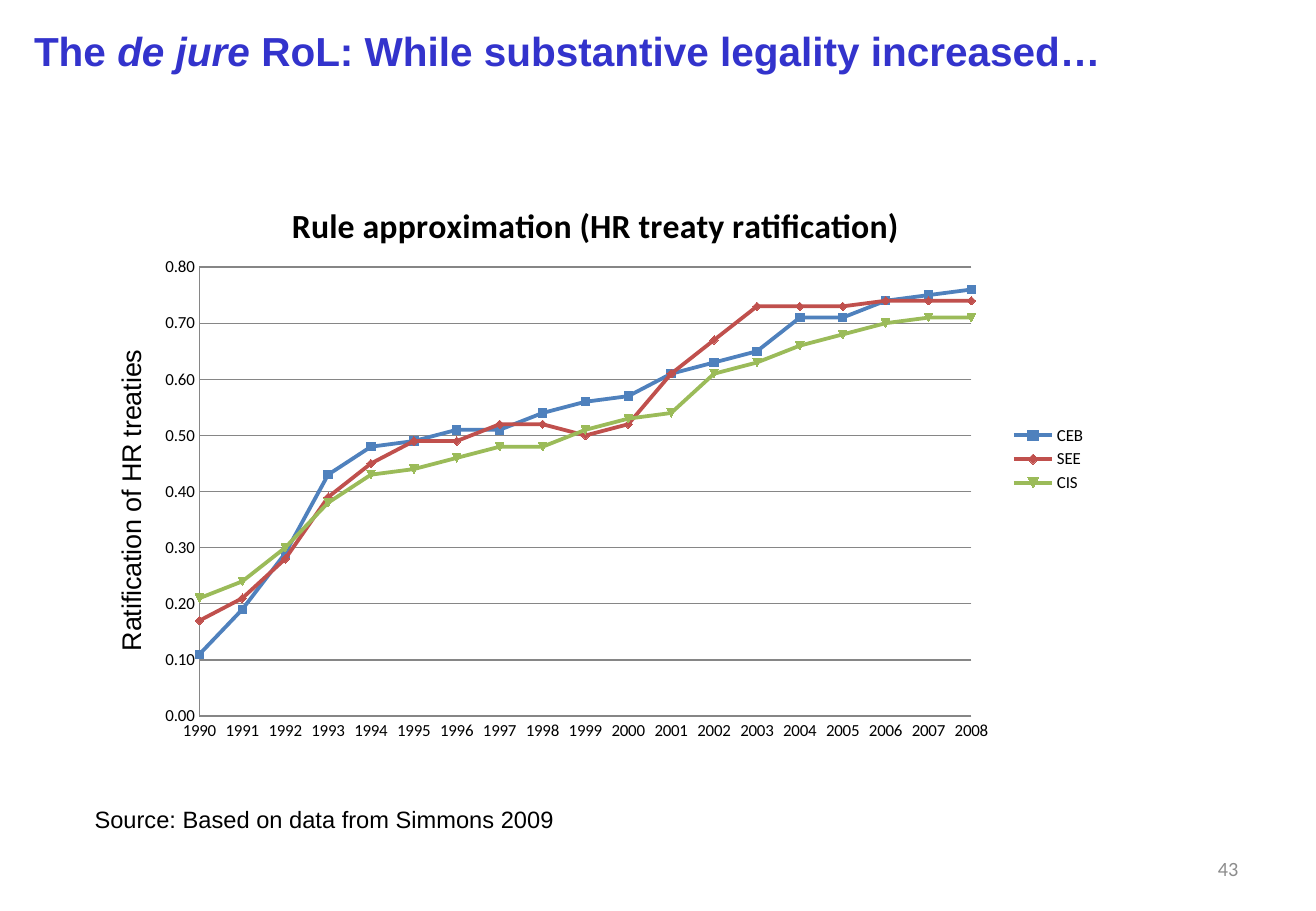
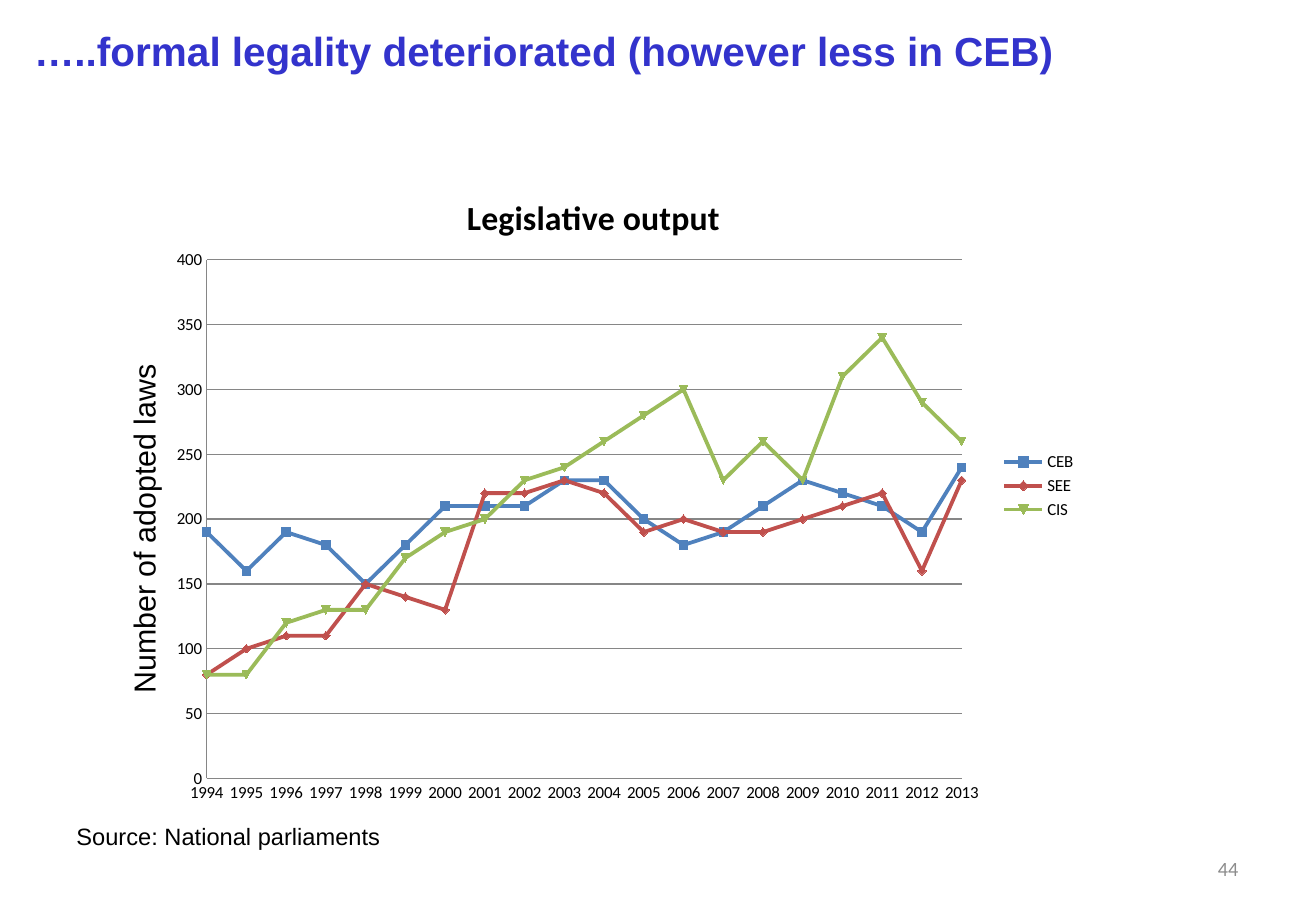
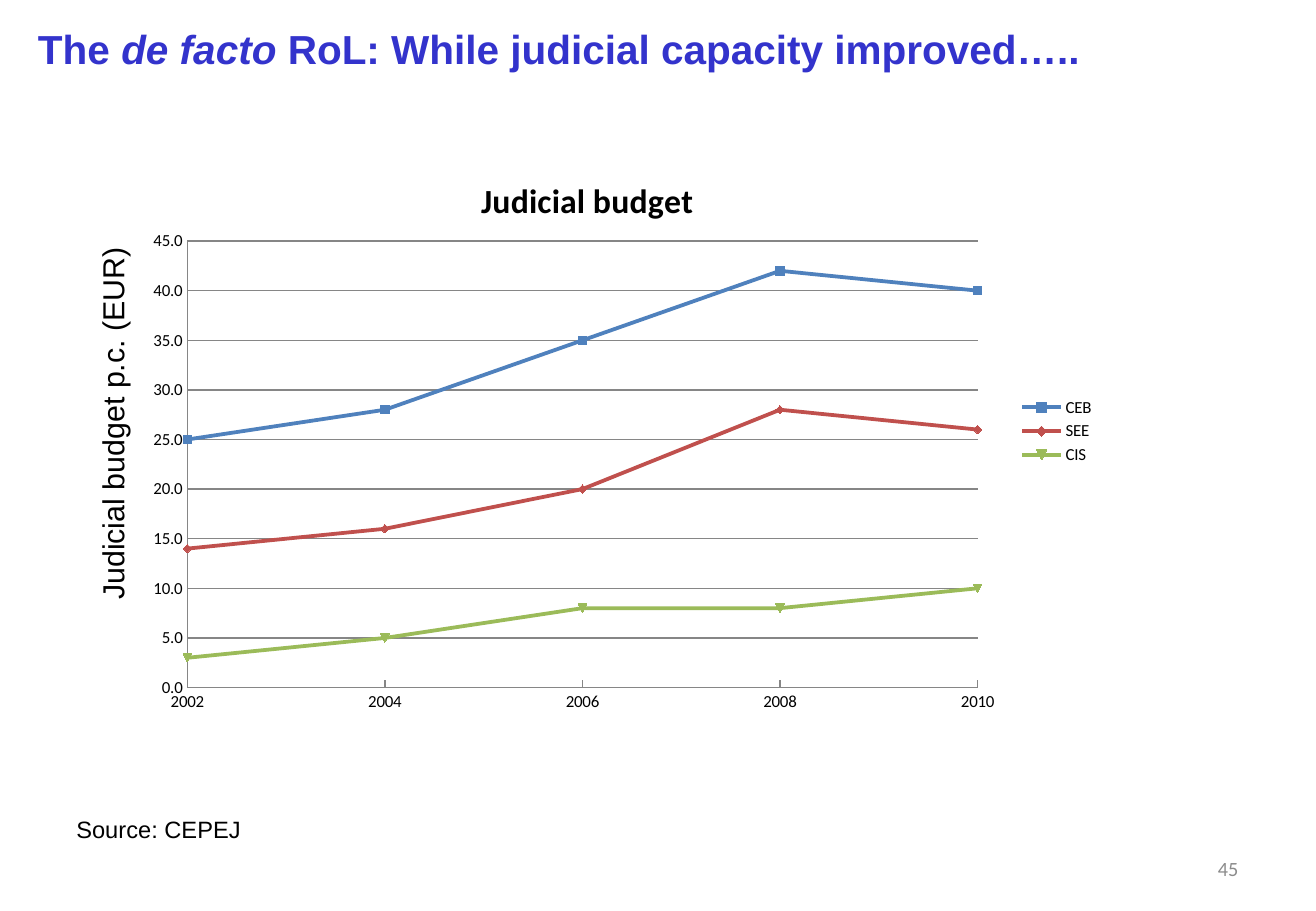
"""Build three slides of line charts on the rule of law."""
from dataclasses import dataclass

from pptx import Presentation
from pptx.chart.data import CategoryChartData
from pptx.dml.color import RGBColor
from pptx.enum.chart import XL_CHART_TYPE, XL_LEGEND_POSITION, XL_TICK_MARK
from pptx.enum.text import MSO_ANCHOR, MSO_AUTO_SIZE, PP_ALIGN
from pptx.oxml import parse_xml
from pptx.oxml.ns import nsdecls
from pptx.util import Inches, Pt

LINE_MARKERS = XL_CHART_TYPE.LINE_MARKERS
LEGEND_RIGHT = XL_LEGEND_POSITION.RIGHT
TICK_NONE, TICK_INSIDE = XL_TICK_MARK.NONE, XL_TICK_MARK.INSIDE
TOP, MIDDLE = MSO_ANCHOR.TOP, MSO_ANCHOR.MIDDLE
LEFT, RIGHT = PP_ALIGN.LEFT, PP_ALIGN.RIGHT
NO_AUTOFIT = MSO_AUTO_SIZE.NONE
TITLE_ONLY = 5


@dataclass(frozen=True)
class Theme:
    """Colours, fonts and sizes shared by all slides."""
    heading: str = "3333CC"
    ink: str = "000000"
    number: str = "8C8C8C"
    grid: str = "868686"
    series: tuple = ("4F81BD", "C0504D", "9BBB59")
    text_font: str = "Arial"
    chart_font: str = "Calibri"
    heading_size: int = 24
    chart_title_size: int = 20
    source_size: int = 14
    number_size: int = 12
    chart_size: int = 10
    series_width: float = 2.25
    grid_width: float = 0.75


THEME = Theme()
REGIONS = ("CEB", "SEE", "CIS")
NUMBER_BOX = (7.76, 6.95, 2.53, 0.4)
HEADING_BOX = (0.18, 0.21, 10.83, 1.1)
HEADING_STYLE = {"box": HEADING_BOX, "inset": 0.1, "top_inset": 0.05, "line_spacing": 0.9}

SLIDES = (
    {
        "number": 43,
        "heading": (("The ", False), ("de jure ", True),
                    ("RoL: While substantive legality increased…", False)),
        "heading_style": HEADING_STYLE,
        "source": ("Source: Based on data from Simmons 2009", (0.68, 6.58, 5.17, 0.34)),
        "chart": {
            "box": (0.68, 1.37, 8.36, 4.82),
            "title": "Rule approximation (HR treaty ratification)",
            "title_at": (0.2, 0.05),
            "plot_at": (0.115, 0.172, 0.76, 0.767),
            "axis_title": "Ratification of HR treaties",
            "axis_title_size": 16,
            "axis_title_at": (0.026, 0.305),
            "number_format": "0.00",
            "top_value": 0.8,
            "step": 0.1,
            "years": range(1990, 2009),
            "values": (
                (0.11, 0.19, 0.29, 0.43, 0.48, 0.49, 0.51, 0.51, 0.54, 0.56,
                 0.57, 0.61, 0.63, 0.65, 0.71, 0.71, 0.74, 0.75, 0.76),
                (0.17, 0.21, 0.28, 0.39, 0.45, 0.49, 0.49, 0.52, 0.52, 0.5,
                 0.52, 0.61, 0.67, 0.73, 0.73, 0.73, 0.74, 0.74, 0.74),
                (0.21, 0.24, 0.3, 0.38, 0.43, 0.44, 0.46, 0.48, 0.48, 0.51,
                 0.53, 0.54, 0.61, 0.63, 0.66, 0.68, 0.7, 0.71, 0.71),
            ),
        },
    },
    {
        "number": 44,
        "heading": (("…..formal legality deteriorated (however less in CEB)", False),),
        "heading_style": HEADING_STYLE,
        "source": ("Source: National parliaments", (0.53, 6.72, 4.09, 0.34)),
        "chart": {
            "box": (0.73, 1.28, 8.23, 5.44),
            "title": "Legislative output",
            "title_at": (0.372, 0.048),
            "plot_at": (0.118, 0.158, 0.755, 0.785),
            "axis_title": "Number of adopted laws",
            "axis_title_size": 18,
            "axis_title_at": (0.03, 0.308),
            "number_format": "0",
            "top_value": 400,
            "step": 50,
            "years": range(1994, 2014),
            "values": (
                (190, 160, 190, 180, 150, 180, 210, 210, 210, 230,
                 230, 200, 180, 190, 210, 230, 220, 210, 190, 240),
                (80, 100, 110, 110, 150, 140, 130, 220, 220, 230,
                 220, 190, 200, 190, 190, 200, 210, 220, 160, 230),
                (80, 80, 120, 130, 130, 170, 190, 200, 230, 240,
                 260, 280, 300, 230, 260, 230, 310, 340, 290, 260),
            ),
        },
    },
    {
        "number": 45,
        "heading": ((" The ", False), ("de facto ", True),
                    ("RoL: While judicial capacity improved…..", False)),
        "heading_style": {"box": (0.14, 0.09, 10.95, 0.56), "inset": 0.08,
                          "top_inset": 0.11, "line_spacing": 1.0},
        "source": ("Source: CEPEJ", (0.53, 6.66, 4.96, 0.34)),
        "chart": {
            "box": (0.53, 1.15, 8.58, 4.8),
            "title": "Judicial budget",
            "title_at": (0.394, 0.052),
            "plot_at": (0.118, 0.174, 0.758, 0.766),
            "axis_title": "Judicial budget p.c. (EUR)",
            "axis_title_size": 18,
            "axis_title_at": (0.022, 0.175),
            "number_format": "0.0",
            "top_value": 45,
            "step": 5,
            "year_tick": TICK_INSIDE,
            "years": range(2002, 2011, 2),
            "values": ((25, 28, 35, 42, 40), (14, 16, 20, 28, 26), (3, 5, 8, 8, 10)),
        },
    },
)


def inches(box):
    """Convert a box of numbers to lengths."""
    return [Inches(value) for value in box]


def format_font(font, *, name, size, color=THEME.ink, bold=False, italic=False):
    """Apply one complete character format."""
    font.name, font.size = name, Pt(size)
    font.bold, font.italic = bold, italic
    font.color.rgb = RGBColor.from_string(color)


def format_line(line, color, width):
    """Give a line its colour and width."""
    line.color.rgb = RGBColor.from_string(color)
    line.width = Pt(width)


def add_text(page, text, box, *, align=LEFT, anchor=TOP, **font_format):
    """Add a wrapped text box with one formatted paragraph."""
    frame = page.shapes.add_textbox(*inches(box)).text_frame
    frame.word_wrap = True
    frame.vertical_anchor = anchor
    para = frame.paragraphs[0]
    para.alignment = align
    span = para.add_run()
    span.text = text
    format_font(span.font, **font_format)


def set_heading(page, spans, *, box, inset, top_inset, line_spacing):
    """Place the title placeholder and fill it with upright and italic spans."""
    title = page.shapes.title
    title.left, title.top, title.width, title.height = inches(box)
    frame = title.text_frame
    frame.auto_size = NO_AUTOFIT
    frame.word_wrap = True
    frame.vertical_anchor = TOP
    frame.margin_left = frame.margin_right = Inches(inset)
    frame.margin_top = Inches(top_inset)
    para = frame.paragraphs[0]
    para.alignment = LEFT
    para.line_spacing = line_spacing
    for text, italic in spans:
        span = para.add_run()
        span.text = text
        format_font(span.font, name=THEME.text_font, size=THEME.heading_size,
                    color=THEME.heading, bold=True, italic=italic)


def set_layout(element, position):
    """Fix a chart part at fractions of the chart area."""
    for old in element.xpath("c:layout"):
        element.remove(old)
    target = '<c:layoutTarget val="inner"/>' if len(position) == 4 else ""
    modes = '<c:xMode val="edge"/><c:yMode val="edge"/>'
    sizes = "".join(f'<c:{key} val="{value}"/>' for key, value in zip("xywh", position))
    layout = parse_xml(f'<c:layout {nsdecls("c")}><c:manualLayout>{target}{modes}{sizes}'
                       "</c:manualLayout></c:layout>")
    element.insert(len(element.xpath("c:tx")), layout)


def set_chart_text(title, text, position, **font_format):
    """Write and place a chart title or an axis title."""
    span = title.text_frame.paragraphs[0].add_run()
    span.text = text
    format_font(span.font, **font_format)
    set_layout(title.element, position)


def format_axes(chart, spec):
    """Format both axes and let the lines start on the value axis."""
    years, values = chart.category_axis, chart.value_axis
    for axis in (years, values):
        axis.major_tick_mark = axis.minor_tick_mark = TICK_NONE
        format_line(axis.format.line, THEME.grid, THEME.grid_width)
    years.major_tick_mark = spec.get("year_tick", TICK_NONE)
    values.minimum_scale, values.maximum_scale = 0, spec["top_value"]
    values.major_unit = spec["step"]
    values.has_major_gridlines = True
    format_line(values.major_gridlines.format.line, THEME.grid, THEME.grid_width)
    values.tick_labels.number_format = spec["number_format"]
    values.tick_labels.number_format_is_linked = False
    set_chart_text(values.axis_title, spec["axis_title"], spec["axis_title_at"],
                   name=THEME.text_font, size=spec["axis_title_size"])
    body = values.axis_title.element.xpath(".//a:bodyPr")[0]
    body.set("rot", "-5400000")
    body.set("vert", "horz")
    value_axis = chart.element.xpath(".//c:valAx")[0]
    for old in value_axis.xpath("c:crossBetween"):
        value_axis.remove(old)
    value_axis.xpath("c:crosses")[0].addnext(
        parse_xml(f'<c:crossBetween {nsdecls("c")} val="midCat"/>'))


def add_line_chart(page, spec):
    """Add a line chart with one line for each region."""
    data = CategoryChartData(number_format=spec["number_format"])
    data.categories = [str(year) for year in spec["years"]]
    for region, values in zip(REGIONS, spec["values"]):
        data.add_series(region, values)
    chart = page.shapes.add_chart(LINE_MARKERS, *inches(spec["box"]), data).chart
    format_font(chart.font, name=THEME.chart_font, size=THEME.chart_size)
    set_chart_text(chart.chart_title, spec["title"], spec["title_at"],
                   name=THEME.chart_font, size=THEME.chart_title_size, bold=True)
    chart.has_legend = True
    chart.legend.position = LEGEND_RIGHT
    chart.legend.include_in_layout = False
    chart.plots[0].vary_by_categories = False
    for series, color in zip(chart.plots[0].series, THEME.series):
        series.smooth = False
        format_line(series.format.line, color, THEME.series_width)
    format_axes(chart, spec)
    set_layout(chart.element.xpath("c:chart/c:plotArea")[0], spec["plot_at"])


def add_slide(deck, content):
    """Add one slide with heading, source, number and chart."""
    page = deck.slides.add_slide(deck.slide_layouts[TITLE_ONLY])
    set_heading(page, content["heading"], **content["heading_style"])
    add_text(page, *content["source"], name=THEME.text_font, size=THEME.source_size)
    add_text(page, str(content["number"]), NUMBER_BOX, align=RIGHT, anchor=MIDDLE,
             name=THEME.chart_font, size=THEME.number_size, color=THEME.number)
    add_line_chart(page, content["chart"])


def main():
    """Build and save the deck."""
    deck = Presentation()
    deck.slide_width, deck.slide_height = inches((10.83, 7.5))
    for content in SLIDES:
        add_slide(deck, content)
    deck.save("out.pptx")


if __name__ == "__main__":
    main()
